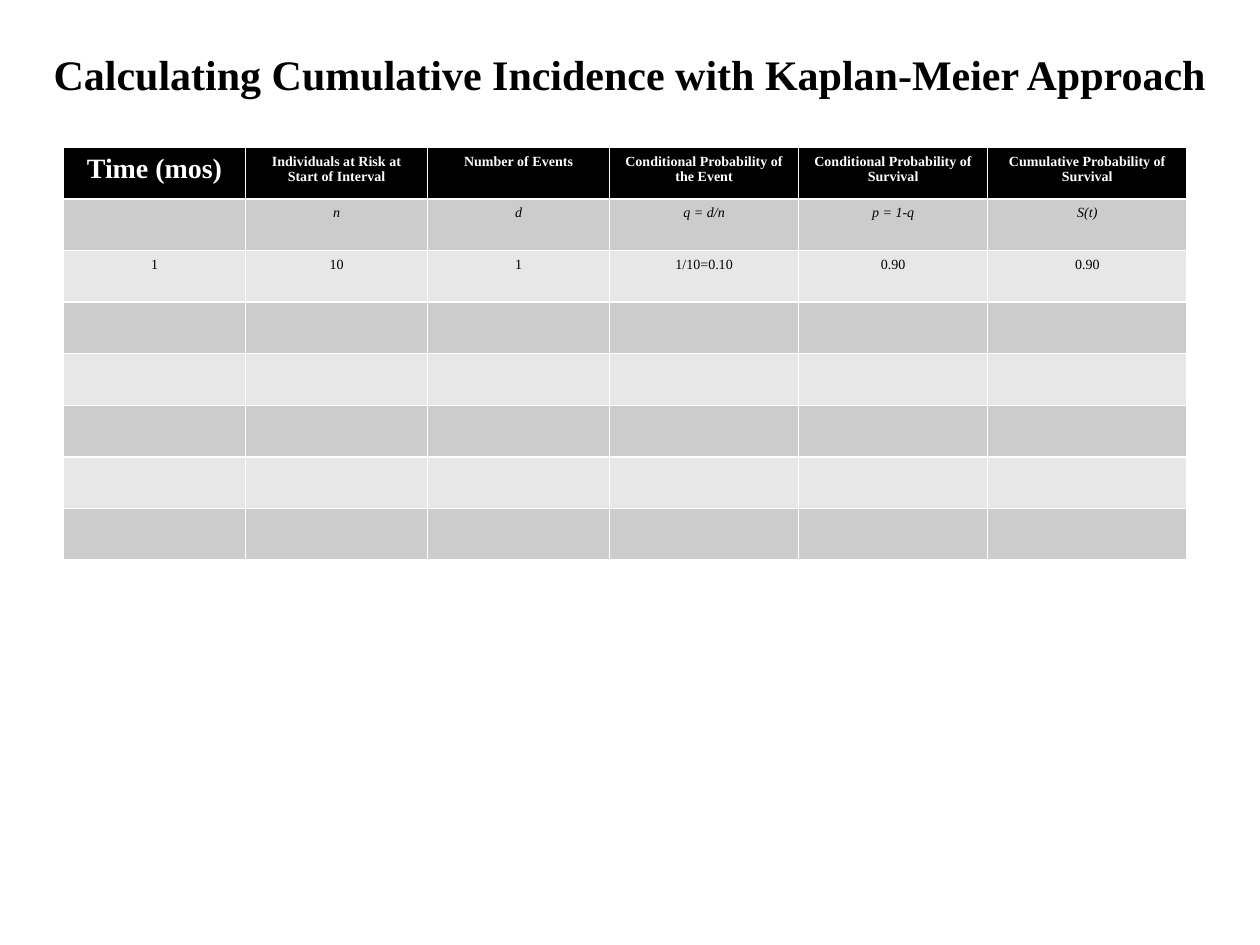
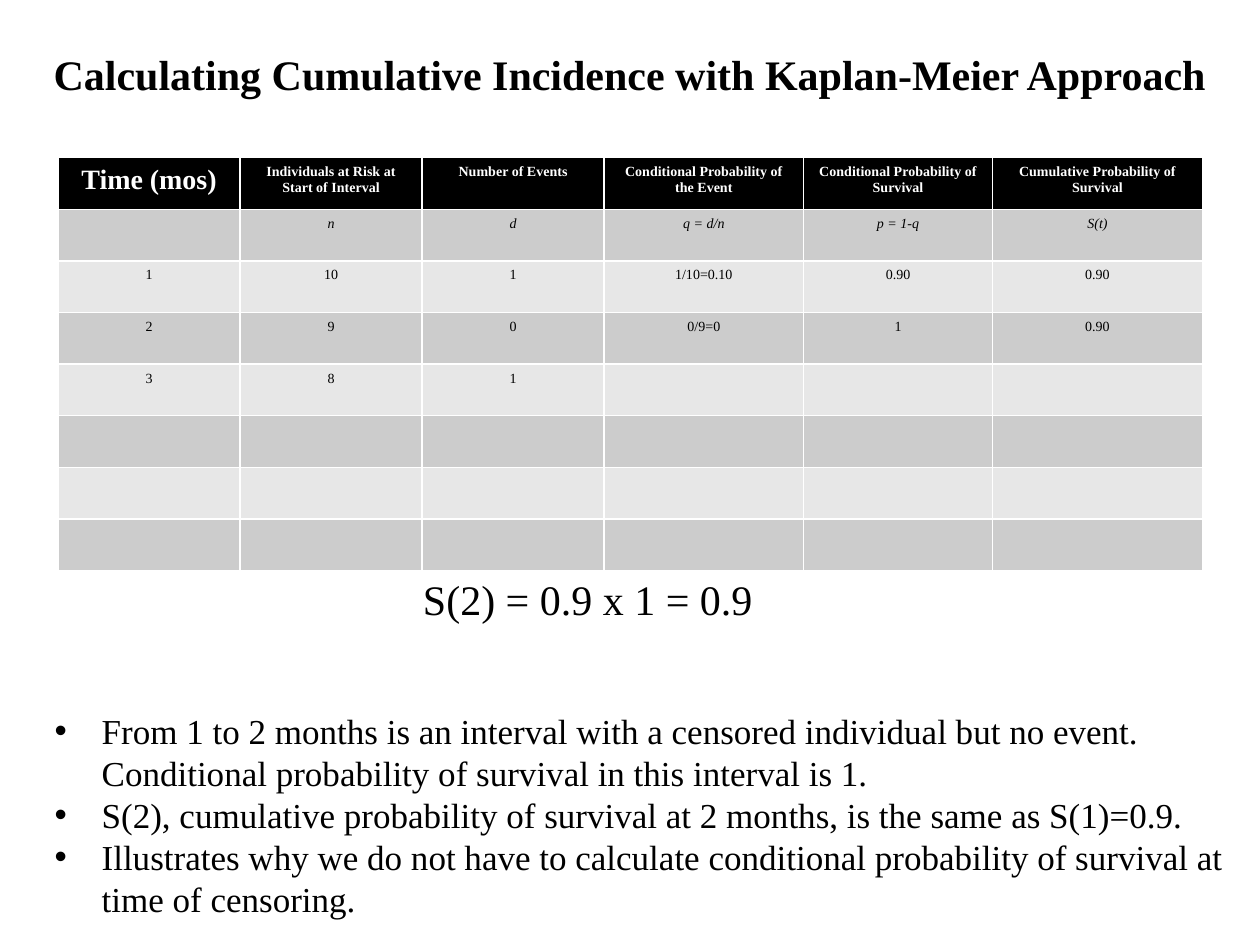
from lxml import etree
from pptx import Presentation
from pptx import util as u
from pptx.dml.color import RGBColor
from pptx.enum import text
from pptx.oxml.ns import qn

FONT = "Times New Roman"
BLACK, WHITE = "000000", "FFFFFF"
BANDS = ("CCCCCC", "E7E7E7")
ROW_COUNT, ROW_HEIGHT = 8, 1.04
HANGING = 0.95

TITLE = "Calculating Cumulative Incidence with Kaplan-Meier Approach"
TITLE_BOX = (0.42, 0.85, 24.55, 1.28)
HEADINGS = ["Time (mos)", "Individuals at Risk at Start of Interval",
            "Number of Events", "Conditional Probability of the Event",
            "Conditional Probability of Survival",
            "Cumulative Probability of Survival"]
SYMBOLS = ["", "n", "d", "q = d/n", "p = 1-q", "S(t)"]
MONTH_1 = ["1", "10", "1", "1/10=0.10", "0.90", "0.90"]
MONTH_2 = ["2", "9", "0", "0/9=0", "1", "0.90"]
MONTH_3 = ["3", "8", "1"]

SLIDES = [
    {"corner": (1.28, 2.97),
     "widths": [3.67, 3.67, 3.67, 3.81, 3.81, 4.02],
     "months": [MONTH_1]},
    {"corner": (1.17, 3.18),
     "widths": [3.67, 3.67, 3.67, 4.02, 3.81, 4.23],
     "months": [MONTH_1, MONTH_2, MONTH_3],
     "formula": "S(2) = 0.9 x 1 = 0.9",
     "remarks": [
         "From 1 to 2 months is an interval with a censored individual but no "
         "event. Conditional probability of survival in this interval is 1.",
         "S(2), cumulative probability of survival at 2 months, is the same as "
         "S(1)=0.9.",
         "Illustrates why we do not have to calculate conditional probability "
         "of survival at time of censoring."]},
]
FORMULA_BOX = (5.5, 11.43, 12.7, 1.28)
REMARKS_BOX = (0.85, 14.18, 24.13, 4.52)


def rgb(value):
    return RGBColor.from_string(value)


def write(paragraph, words, size, color=BLACK, centred=True, **style):
    run = paragraph.add_run()
    run.text = words
    for key, value in {"name": FONT, "size": u.Pt(size), **style}.items():
        setattr(run.font, key, value)
    run.font.color.rgb = rgb(color)
    if centred:
        paragraph.alignment = text.PP_ALIGN.CENTER


def add_bullet(paragraph):
    properties = paragraph._p.get_or_add_pPr()
    properties.set("marL", str(u.Cm(HANGING)))
    properties.set("indent", str(-u.Cm(HANGING)))
    etree.SubElement(properties, qn("a:buFont"), typeface="Arial")
    etree.SubElement(properties, qn("a:buChar"), char="•")


def add_text(slide, box, lines, size, bulleted=False, **style):
    frame = slide.shapes.add_textbox(*map(u.Cm, box)).text_frame
    frame.word_wrap = True
    for index, line in enumerate(lines):
        paragraph = frame.add_paragraph() if index else frame.paragraphs[0]
        write(paragraph, line, size, centred=not bulleted, **style)
        if bulleted:
            add_bullet(paragraph)


def row_style(row, column):
    if row == 0:
        return {"size": 8 if column else 16, "color": WHITE, "bold": True}
    return {"size": 8, "bold": False, "italic": row == 1}


def add_life_table(slide, corner, widths, months):
    rows = [HEADINGS, SYMBOLS, *months]
    size = (sum(widths), ROW_COUNT * ROW_HEIGHT)
    table = slide.shapes.add_table(ROW_COUNT, len(widths),
                                   *map(u.Cm, corner + size)).table
    for column, width in zip(table.columns, widths):
        column.width = u.Cm(width)
    for r, row in enumerate(table.rows):
        row.height = u.Cm(ROW_HEIGHT)
        for cell in row.cells:
            cell.fill.solid()
            cell.fill.fore_color.rgb = rgb(BANDS[(r - 1) % 2] if r else BLACK)
    for r, entries in enumerate(rows):
        for c, entry in enumerate(entries):
            if entry:
                paragraph = table.cell(r, c).text_frame.paragraphs[0]
                write(paragraph, entry, **row_style(r, c))


def main():
    deck = Presentation()
    deck.slide_width, deck.slide_height = u.Cm(25.4), u.Cm(19.05)
    for content in SLIDES:
        slide = deck.slides.add_slide(deck.slide_layouts[6])
        add_life_table(slide, content["corner"], content["widths"],
                       content["months"])
        if "formula" in content:
            add_text(slide, FORMULA_BOX, [content["formula"]], 24)
        add_text(slide, TITLE_BOX, [TITLE], 24, bold=True)
        if "remarks" in content:
            add_text(slide, REMARKS_BOX, content["remarks"], 20, bulleted=True)
    deck.save("out.pptx")


if __name__ == "__main__":
    main()
